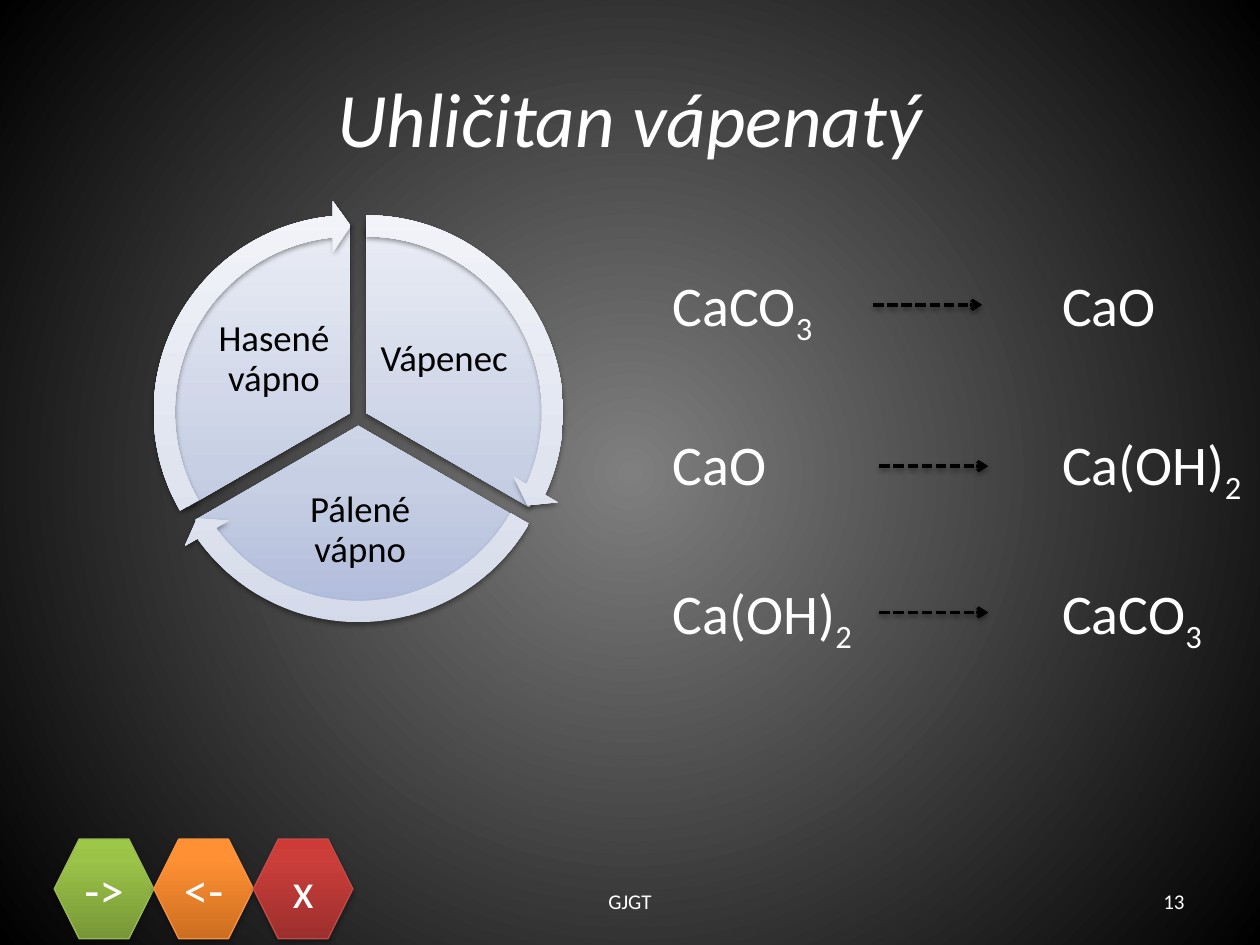
from lxml import etree
from pptx import Presentation
from pptx.dml.color import RGBColor
from pptx.enum.dml import MSO_LINE
from pptx.enum.shapes import MSO_CONNECTOR, MSO_SHAPE
from pptx.enum.text import MSO_ANCHOR, MSO_AUTO_SIZE, PP_ALIGN
from pptx.oxml.ns import qn
from pptx.util import Pt

HEXAGON, PIE, ARROW = MSO_SHAPE.HEXAGON, MSO_SHAPE.PIE, MSO_SHAPE.CIRCULAR_ARROW
STRAIGHT, DASH = MSO_CONNECTOR.STRAIGHT, MSO_LINE.SQUARE_DOT
LEFT, CENTER, RIGHT = PP_ALIGN.LEFT, PP_ALIGN.CENTER, PP_ALIGN.RIGHT
MIDDLE, TOP = MSO_ANCHOR.MIDDLE, MSO_ANCHOR.TOP
GROW = MSO_AUTO_SIZE.SHAPE_TO_FIT_TEXT


def color(code):
    return RGBColor.from_string(code)


def child(parent, tag, **attributes):
    names = {name: str(value) for name, value in attributes.items()}
    return etree.SubElement(parent, qn(tag), names)


class SlideBuilder:
    font = "Calibri"
    white, black = "FFFFFF", "000000"

    def __init__(self, deck):
        self.page = deck.slides.add_slide(deck.slide_layouts[5])

    def gradient(self, holder, stops, radial=False):
        solid = holder.find(qn("a:solidFill"))
        grad = etree.Element(qn("a:gradFill"), rotWithShape="1")
        stop_list = child(grad, "a:gsLst")
        for position, code in stops:
            stop = child(stop_list, "a:gs", pos=position * 1000)
            child(stop, "a:srgbClr", val=code)
        if radial:
            circle = child(grad, "a:path", path="circle")
            child(circle, "a:fillToRect", l=50000, t=50000, r=50000, b=50000)
        else:
            child(grad, "a:lin", ang=270 * 60000, scaled=0)
        holder.replace(solid, grad)

    def shadow(self, effects, opacity, distance):
        outer = child(effects, "a:outerShdw", blurRad=Pt(3.1), dist=Pt(distance),
                      dir=90 * 60000, rotWithShape=0)
        tint = child(outer, "a:srgbClr", val=self.black)
        child(tint, "a:alpha", val=opacity * 1000)

    def background(self, stops):
        self.page.background.fill.solid()
        self.gradient(self.page.element.find(".//" + qn("p:bgPr")), stops, radial=True)

    def fill_text(self, box, text, size, ink, align=CENTER, anchor=MIDDLE):
        frame = box.text_frame
        frame.text = text
        frame.vertical_anchor = anchor
        para = frame.paragraphs[0]
        para.alignment = align
        self.style(para.runs[0], size, ink)
        return para

    def style(self, span, size, ink):
        span.font.name = self.font
        span.font.size = Pt(size)
        span.font.color.rgb = color(ink)

    def title(self, text, left, top, width, height):
        box = self.page.shapes.title
        box.left, box.top, box.width, box.height = map(Pt, (left, top, width, height))
        para = self.fill_text(box, text, 44, self.white)
        para.runs[0].font.italic = True

    def text(self, text, left, top, width, height, size, ink, align=CENTER,
             anchor=MIDDLE, inset=None):
        box = self.page.shapes.add_textbox(Pt(left), Pt(top), Pt(width), Pt(height))
        frame = box.text_frame
        frame.word_wrap = True
        para = self.fill_text(box, text, size, ink, align, anchor)
        if inset is not None:
            frame.margin_left = frame.margin_right = Pt(inset)
            frame.margin_top = frame.margin_bottom = Pt(inset)
            para.line_spacing = 0.9
        return box

    def formula(self, parts, left, top, width):
        base, index = parts
        box = self.text(base, left, top, width, 46, 32, self.white, LEFT, TOP)
        box.text_frame.word_wrap = False
        box.text_frame.auto_size = GROW
        if index:
            span = box.text_frame.paragraphs[0].add_run()
            span.text = index
            self.style(span, 32, self.white)
            span._r.get_or_add_rPr().set("baseline", "-25000")

    def shape(self, kind, left, top, size, stops, adjustments=(), outline=None,
              opacity=38, distance=1.6):
        item = self.page.shapes.add_shape(kind, Pt(left), Pt(top), Pt(size), Pt(size))
        for number, value in enumerate(adjustments):
            item.adjustments[number] = value
        item.fill.solid()
        properties = item.element.spPr
        self.gradient(properties, stops)
        if outline:
            item.line.color.rgb = color(outline)
            item.line.width = Pt(0.75)
        else:
            item.line.fill.background()
        item.shadow.inherit = False
        self.shadow(properties.find(qn("a:effectLst")), opacity, distance)
        return item

    def button(self, text, left, top, size, stops, outline):
        item = self.shape(HEXAGON, left, top, size, stops, outline=outline,
                          opacity=35, distance=1.8)
        item.text_frame.word_wrap = False
        self.fill_text(item, text, 28, self.white)

    def arrow(self, left, right, y):
        line = self.page.shapes.add_connector(STRAIGHT, Pt(left), Pt(y), Pt(right), Pt(y))
        line.line.color.rgb = color(self.black)
        line.line.width = Pt(2)
        line.line.dash_style = DASH
        properties = line.element.spPr
        child(properties.find(qn("a:ln")), "a:tailEnd", type="arrow")
        self.shadow(child(properties, "a:effectLst"), 38, 1.6)


def main():
    deck = Presentation()
    deck.slide_width, deck.slide_height = Pt(720), Pt(540)
    slide = SlideBuilder(deck)
    slide.background([(0, "7F7F7F"), (100, "000000")])
    slide.title("Uhličitan vápenatý", 36, 21.6, 648, 90)

    buttons = [
        ("->", ("779737", "9BC348", "9DC746"), "98B955"),
        ("<-", ("CC6E20", "FF9034", "FF9136"), "F69240"),
        ("x", ("9C2F2D", "CB3E3A", "CE3B37"), "BF4C48"),
    ]
    for number, (text, shades, outline) in enumerate(buttons):
        slide.button(text, 31 + 56.9 * number, 479.5, 56.9,
                     list(zip((0, 80, 100), shades)), outline)

    sector_stops = [(0, "AFBBDA"), (35, "C7CFE4"), (100, "EAEDF5")]
    arrow_stops = [(0, "D3D9E9"), (35, "E0E4EF"), (100, "F2F4F9")]
    sectors = [
        ("Vápenec", 0, (162, 18), (14.73, 161.99), (215.3, 173.5, 77, 64)),
        ("Pálené vápno", 7.5, (18, 90), (86.72, 18.01), (148.3, 275, 115.2, 56.2)),
        ("Hasené vápno", 0, (90, 162), (158.73, 90), (118.1, 173.5, 77, 64)),
    ]
    for number, (text, drop, angles, _, label) in enumerate(sectors):
        slide.shape(PIE, 101.5 - 4.4 * number, 128.2 + drop, 215.3, sector_stops, angles)
        slide.text(text, *label, 21, slide.black, inset=2.1)
    for number, (_, drop, _, (end, start), _) in enumerate(sectors):
        slide.shape(ARROW, 88.4 - 4.5 * number, 114.6 + drop, 241.9, arrow_stops,
                    (0.05, 3.28, end, start, 0.06))

    carbonate, oxide, hydroxide = ("CaCO", "3"), ("CaO", ""), ("Ca(OH)", "2")
    widths = {carbonate: 96.5, oxide: 69, hydroxide: 119.5}
    reactions = [
        (carbonate, oxide, 151.2, 499, 174.2),
        (oxide, hydroxide, 242, 502.5, 266.4),
        (hydroxide, carbonate, 327, 502.5, 350),
    ]
    for source, product, top, start, y in reactions:
        slide.formula(source, 377.3, top, widths[source])
        slide.arrow(start, start + 62.3, y)
        slide.formula(product, 599.8, top, widths[product])

    slide.text("GJGT", 246, 500.5, 228, 28.8, 12, slide.white)
    slide.text("13", 516, 500.5, 168, 28.8, 12, slide.white, RIGHT)
    deck.save("out.pptx")


if __name__ == "__main__":
    main()
